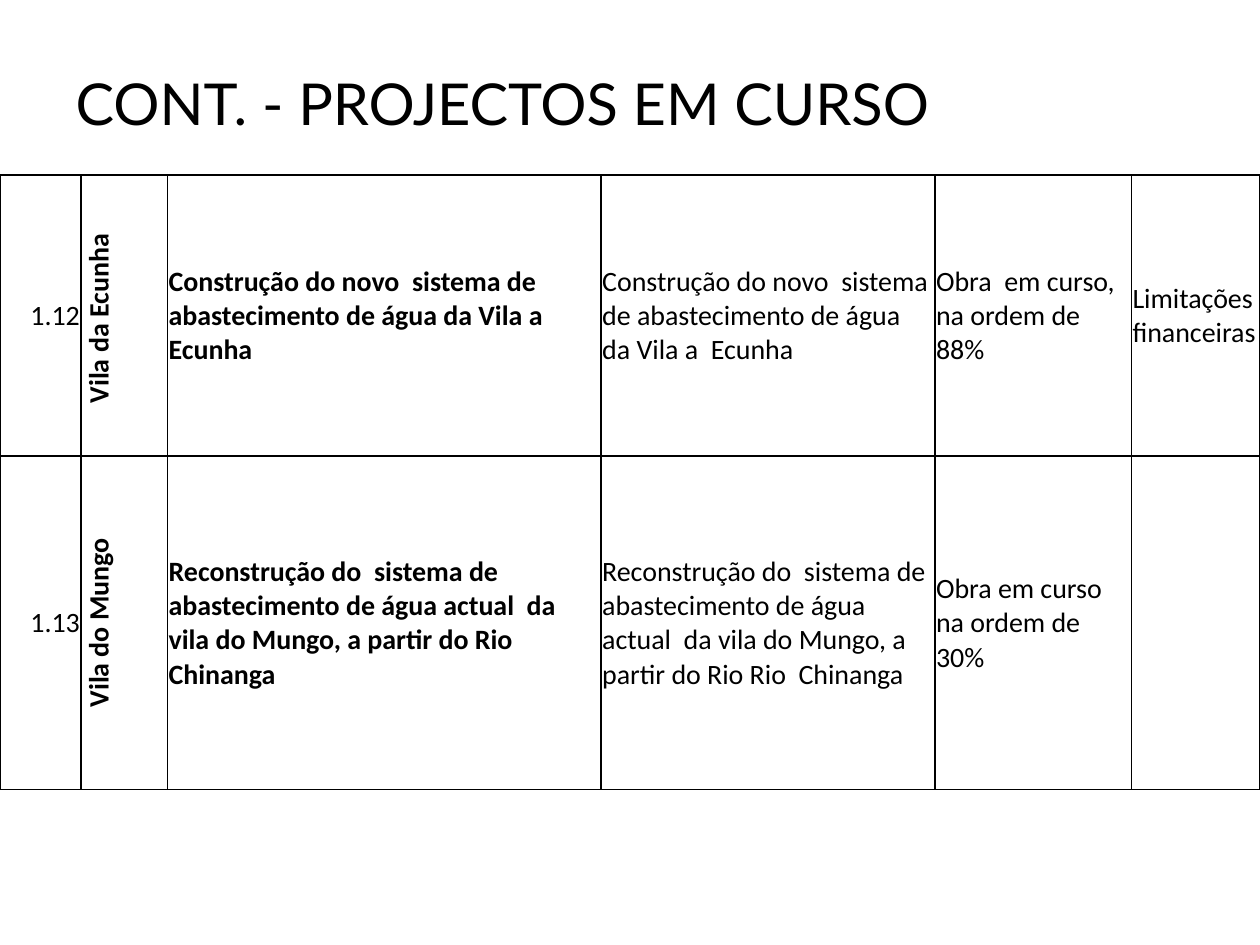
import pptx
import pptx.util
import pptx.dml.color
import pptx.enum.text
import pptx.oxml
import pptx.oxml.ns
from pptx.util import Cm

COLORS = {"text": "000000", "border": "000000", "fill": "FFFFFF"}
ALIGN = pptx.enum.text.PP_ALIGN
MIDDLE = pptx.enum.text.MSO_ANCHOR.MIDDLE

TITLE = "CONT. - PROJECTOS EM CURSO"
PROJECTS = [
    (
        "1.12",
        "Vila da Ecunha ",
        "Construção do novo  sistema de abastecimento de água da Vila a  Ecunha",
        "Construção do novo  sistema de abastecimento de água da Vila a  Ecunha",
        "Obra  em curso, na ordem de 88%",
        "Limitações financeiras",
    ),
    (
        "1.13",
        "Vila do Mungo",
        "Reconstrução do  sistema de abastecimento de água actual  da vila do Mungo, a partir do Rio  Chinanga",
        "Reconstrução do  sistema de abastecimento de água actual  da vila do Mungo, a partir do Rio Rio  Chinanga",
        "Obra em curso na ordem de 30%",
        "",
    ),
]
COLUMNS = [
    {"width": 1.63, "align": ALIGN.RIGHT},
    {"width": 1.75, "align": ALIGN.CENTER, "bold": True, "vertical": True},
    {"width": 8.74, "bold": True},
    {"width": 6.73},
    {"width": 3.96},
    {"width": 2.59},
]
ROW_HEIGHTS = [5.66, 6.73]


def color(name):
    return pptx.dml.color.RGBColor.from_string(COLORS[name])


def write_text(text_frame, text, font="Calibri", size=16, bold=False, align=ALIGN.LEFT, spacing=None):
    paragraph = text_frame.paragraphs[0]
    paragraph.alignment = align
    if spacing:
        paragraph.line_spacing = spacing
    paragraph.font.size = pptx.util.Pt(size)
    if text:
        run = paragraph.add_run()
        run.text = text
        run.font.name = font
        run.font.size = pptx.util.Pt(size)
        run.font.bold = bold
        run.font.color.rgb = color("text")


def format_cell(cell, vertical):
    cell.vertical_anchor = MIDDLE
    cell.margin_left = cell.margin_right = cell.margin_top = Cm(0.02)
    cell.margin_bottom = 0
    cell.fill.solid()
    cell.fill.fore_color.rgb = color("fill")
    properties = cell._tc.get_or_add_tcPr()
    if vertical:
        properties.set("vert", "vert270")
    for position, side in enumerate(("lnL", "lnR", "lnT", "lnB")):
        border = pptx.oxml.parse_xml(
            f'<a:{side} {pptx.oxml.ns.nsdecls("a")} w="{pptx.util.Pt(1)}"><a:solidFill>'
            f'<a:srgbClr val="{COLORS["border"]}"/></a:solidFill></a:{side}>'
        )
        properties.insert(position, border)


def add_title(slide):
    title = slide.shapes.title
    title.left, title.top, title.width, title.height = Cm(1.27), Cm(0.76), Cm(22.86), Cm(2.77)
    title.text_frame.vertical_anchor = MIDDLE
    write_text(title.text_frame, TITLE, font="Lato", size=33, spacing=0.9)


def add_projects(slide):
    width = sum(column["width"] for column in COLUMNS)
    frame = slide.shapes.add_table(
        len(PROJECTS), len(COLUMNS), 0, Cm(3.53), Cm(width), Cm(sum(ROW_HEIGHTS))
    )
    table = frame.table
    table.first_row = table.horz_banding = False
    for index, column in enumerate(COLUMNS):
        table.columns[index].width = Cm(column["width"])
    for row, (height, project) in enumerate(zip(ROW_HEIGHTS, PROJECTS)):
        table.rows[row].height = Cm(height)
        for index, (column, text) in enumerate(zip(COLUMNS, project)):
            cell = table.cell(row, index)
            format_cell(cell, column.get("vertical", False))
            write_text(
                cell.text_frame,
                text,
                bold=column.get("bold", False),
                align=column.get("align", ALIGN.LEFT),
            )


def main():
    presentation = pptx.Presentation()
    presentation.slide_width, presentation.slide_height = Cm(25.4), Cm(19.05)
    slide = presentation.slides.add_slide(presentation.slide_layouts[5])
    add_title(slide)
    add_projects(slide)
    presentation.save("out.pptx")


if __name__ == "__main__":
    main()
